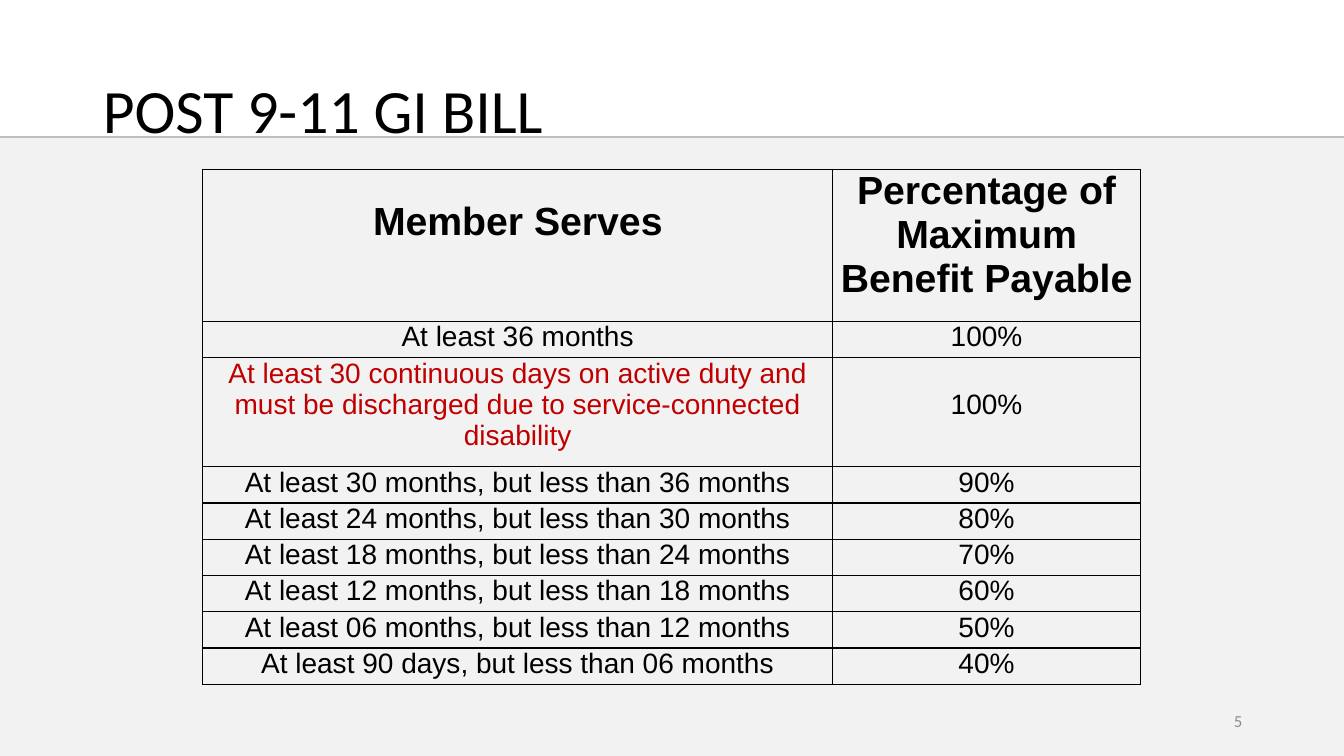
"""Build the Post 9-11 GI Bill benefit table slide."""
import pptx
import pptx.util
import pptx.dml.color
import pptx.enum.shapes
import pptx.enum.text
import pptx.oxml
import pptx.oxml.ns

Inches = pptx.util.Inches
Pt = pptx.util.Pt
Align = pptx.enum.text.PP_ALIGN
Anchor = pptx.enum.text.MSO_ANCHOR
COLORS = {"black": "000000", "red": "C00000", "panel": "F2F2F2",
          "rule": "BFBFBF", "gray": "8C8C8C"}


def color(name):
    return pptx.dml.color.RGBColor.from_string(COLORS[name])


def write(frame, text, size=20, font="Arial", tint="black", bold=False,
          align=Align.CENTER, space=None):
    para = frame.paragraphs[0]
    para.alignment = align
    para.line_spacing = space
    run = para.add_run()
    run.text = text
    run.font.size = Pt(size)
    run.font.name = font
    run.font.bold = bold
    run.font.color.rgb = color(tint)


deck = pptx.Presentation()
deck.slide_width = Inches(13.33)
deck.slide_height = Inches(7.5)
slide = deck.slides.add_slide(deck.slide_layouts[5])
shapes = slide.shapes

panel = shapes.add_shape(pptx.enum.shapes.MSO_SHAPE.RECTANGLE,
                         0, Inches(1.37), Inches(13.33), Inches(6.13))
panel.shadow.inherit = False
panel.fill.solid()
panel.fill.fore_color.rgb = color("panel")
panel.line.fill.background()

rule = shapes.add_connector(pptx.enum.shapes.MSO_CONNECTOR.STRAIGHT,
                            0, Inches(1.36), Inches(13.33), Inches(1.36))
rule.line.color.rgb = color("rule")
rule.line.width = Pt(1.5)
props = rule._element.spPr
props.append(pptx.oxml.parse_xml(
    f'<a:effectLst {pptx.oxml.ns.nsdecls("a")}/>'))

title = shapes.title
title.left, title.top = Inches(0.92), Inches(0.4)
title.width, title.height = Inches(11.5), Inches(1.45)
title.text_frame.vertical_anchor = Anchor.MIDDLE
write(title.text_frame, "POST 9-11 GI BILL", size=44, font="Calibri",
      align=Align.LEFT, space=0.9)
shapes._spTree.append(title._element)

number = shapes.add_textbox(Inches(9.42), Inches(6.95), Inches(3), Inches(0.4))
number.text_frame.word_wrap = True
number.text_frame.vertical_anchor = Anchor.MIDDLE
write(number.text_frame, "5", size=12, font="Calibri", tint="gray",
      align=Align.RIGHT)

rows = [
    ("Member Serves", "Percentage of Maximum Benefit Payable"),
    ("At least 36 months", "100%"),
    ("At least 30 continuous days on active duty and must be discharged "
     "due to service-connected disability", "100%"),
    ("At least 30 months, but less than 36 months", "90%"),
    ("At least 24 months, but less than 30 months", "80%"),
    ("At least 18 months, but less than 24 months", "70%"),
    ("At least 12 months, but less than 18 months", "60%"),
    ("At least 06 months, but less than 12 months", "50%"),
    ("At least 90 days, but less than 06 months", "40%"),
]
tall = {0: 1.51, 2: 1.08}
drops = {(0, 0): 0.3, (2, 1): 0.31}

table = shapes.add_table(len(rows), 2, Inches(2.01), Inches(1.68),
                         Inches(9.3), Inches(5.1)).table
table.first_row = False
table.horz_banding = False
for col, width in zip(table.columns, (6.25, 3.05)):
    col.width = Inches(width)

for r, row in enumerate(rows):
    table.rows[r].height = Inches(tall.get(r, 0.36))
    for c, text in enumerate(row):
        cell = table.cell(r, c)
        cell.margin_left = cell.margin_right = cell.margin_bottom = 0
        cell.margin_top = Inches(drops.get((r, c), 0))
        cell.vertical_anchor = Anchor.TOP
        write(cell.text_frame, text, size=28 if r == 0 else 20, bold=r == 0,
              tint="red" if (r, c) == (2, 0) else "black")
        props = cell._tc.get_or_add_tcPr()
        for side in "LRTB":
            props.append(pptx.oxml.parse_xml(
                f'<a:ln{side} {pptx.oxml.ns.nsdecls("a")} w="{Pt(1)}">'
                f'<a:solidFill><a:srgbClr val="{COLORS["black"]}"/>'
                f'</a:solidFill></a:ln{side}>'))
        cell.fill.background()

deck.save("out.pptx")
